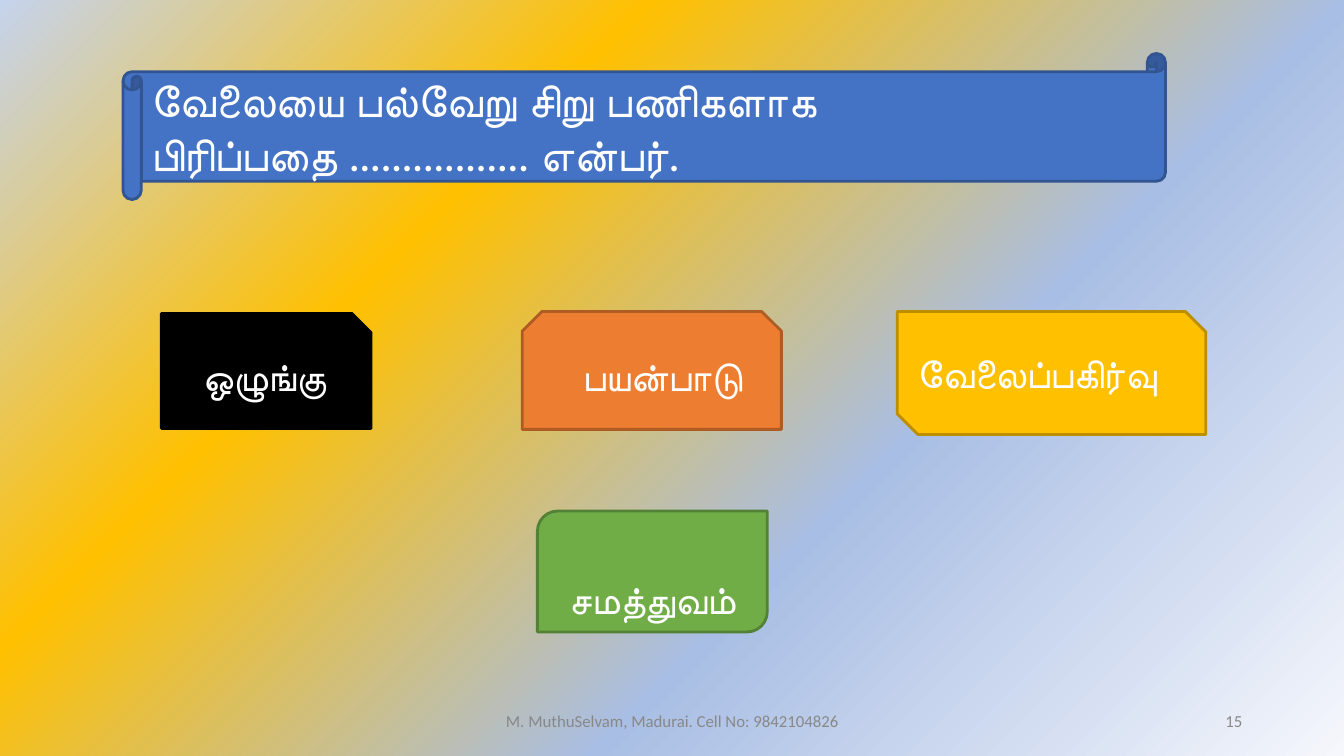
from lxml import etree
from pptx import Presentation
from pptx.dml.color import RGBColor
from pptx.enum.shapes import MSO_SHAPE as Shape
from pptx.enum.text import MSO_ANCHOR as Anchor, PP_ALIGN as Align
from pptx.oxml import parse_xml
from pptx.oxml.ns import nsdecls, qn
from pptx.util import Inches, Pt

WHITE = RGBColor(0xFF, 0xFF, 0xFF)
GREY = RGBColor(0x88, 0x88, 0x88)
BLACK = RGBColor(0x00, 0x00, 0x00)
BLUE, BLUE_EDGE = RGBColor(0x44, 0x72, 0xC4), RGBColor(0x32, 0x54, 0x91)
ORANGE, ORANGE_EDGE = RGBColor(0xED, 0x7D, 0x31), RGBColor(0xAF, 0x5C, 0x24)
GOLD, GOLD_EDGE = RGBColor(0xFF, 0xC0, 0x00), RGBColor(0xBD, 0x8E, 0x00)
GREEN, GREEN_EDGE = RGBColor(0x70, 0xAD, 0x47), RGBColor(0x53, 0x81, 0x35)
BACKDROP_STOPS = [
    (0, RGBColor(0xF5, 0xF7, 0xFC)),
    (36, RGBColor(0xA9, 0xBE, 0xE4)),
    (69, GOLD),
    (100, RGBColor(0xC5, 0xD3, 0xED)),
]

QUESTION = "வேலையை பல்வேறு சிறு பணிகளாக\vபிரிப்பதை ................. என்பர்."
ANSWERS = [
    ("ஒழுங்கு", Shape.SNIP_1_RECTANGLE, (1.6, 3.11, 2.08, 1.14),
     BLACK, BLACK, {"margin_left": Inches(0.41)}, {}),
    ("பயன்பாடு", Shape.SNIP_2_SAME_RECTANGLE, (5.18, 3.09, 2.57, 1.17),
     ORANGE, ORANGE_EDGE, {"margin_left": Inches(0.5)}, {}),
    ("வேலைப்பகிர்வு", Shape.SNIP_2_DIAG_RECTANGLE, (8.9, 3.09, 3.06, 1.22),
     GOLD, GOLD_EDGE, {}, {"bold": True}),
    ("சமத்துவம்", Shape.ROUND_2_DIAG_RECTANGLE, (5.33, 5.07, 2.28, 1.2),
     GREEN, GREEN_EDGE, {"margin_top": Inches(0.6)}, {}),
]


def apply_format(target, values):
    for name, value in values.items():
        setattr(target, name, value)


def write_text(frame, text, color, align, frame_format, font_format):
    apply_format(frame, {"word_wrap": True, "vertical_anchor": Anchor.MIDDLE, **frame_format})
    paragraph = frame.paragraphs[0]
    paragraph.text = text
    paragraph.alignment = align
    for run in paragraph.runs:
        apply_format(run.font, font_format)
        run.font.color.rgb = color


def paint_backdrop(slide):
    fill = slide.background.fill
    fill.gradient()
    gradient = slide.background._cSld.find(".//" + qn("a:gradFill"))
    for child in list(gradient):
        gradient.remove(child)
    stops = etree.SubElement(gradient, qn("a:gsLst"))
    for position, color in BACKDROP_STOPS:
        stop = etree.SubElement(stops, qn("a:gs"), pos=str(position * 1000))
        etree.SubElement(stop, qn("a:srgbClr"), val=str(color))
    gradient.append(parse_xml(
        f'<a:path {nsdecls("a")} path="circle"><a:fillToRect l="100000" t="100000"/></a:path>'))
    gradient.append(parse_xml(f'<a:tileRect {nsdecls("a")} r="-100000" b="-100000"/>'))


def add_card(slide, text, outline, box, fill, edge, size, align, frame_format, font_format):
    card = slide.shapes.add_shape(outline, *map(Inches, box))
    card.shadow.inherit = False
    card.fill.solid()
    card.fill.fore_color.rgb = fill
    card.line.color.rgb = edge
    card.line.width = Pt(2)
    write_text(card.text_frame, text, WHITE, align, frame_format,
               {"name": "Lato", "size": Pt(size), **font_format})


def add_question(slide, box):
    add_card(slide, QUESTION, Shape.HORIZONTAL_SCROLL, box, BLUE, BLUE_EDGE,
             32, Align.LEFT, {}, {})


def add_answers(slide):
    for text, outline, box, fill, edge, frame_format, font_format in ANSWERS:
        align = Align.CENTER if fill == GREEN else Align.LEFT
        add_card(slide, text, outline, box, fill, edge, 28, align, frame_format, font_format)


def add_footer(slide, left, top, height):
    parts = [
        ("M. MuthuSelvam, Madurai. Cell No: 9842104826", 0, 4.5, Align.CENTER),
        ("15", 5, 3, Align.RIGHT),
    ]
    for text, offset, width, align in parts:
        note = slide.shapes.add_textbox(*map(Inches, (left + offset, top, width, height)))
        write_text(note.text_frame, text, GREY, align, {},
                   {"name": "Calibri", "size": Pt(12)})


def main():
    deck = Presentation()
    deck.slide_width, deck.slide_height = Inches(13.33), Inches(7.5)
    slide = deck.slides.add_slide(deck.slide_layouts[6])
    paint_backdrop(slide)
    add_question(slide, (1.22, 0.53, 10.34, 1.45))
    add_answers(slide)
    add_footer(slide, 4.42, 6.95, 0.4)
    deck.save("out.pptx")


if __name__ == "__main__":
    main()
